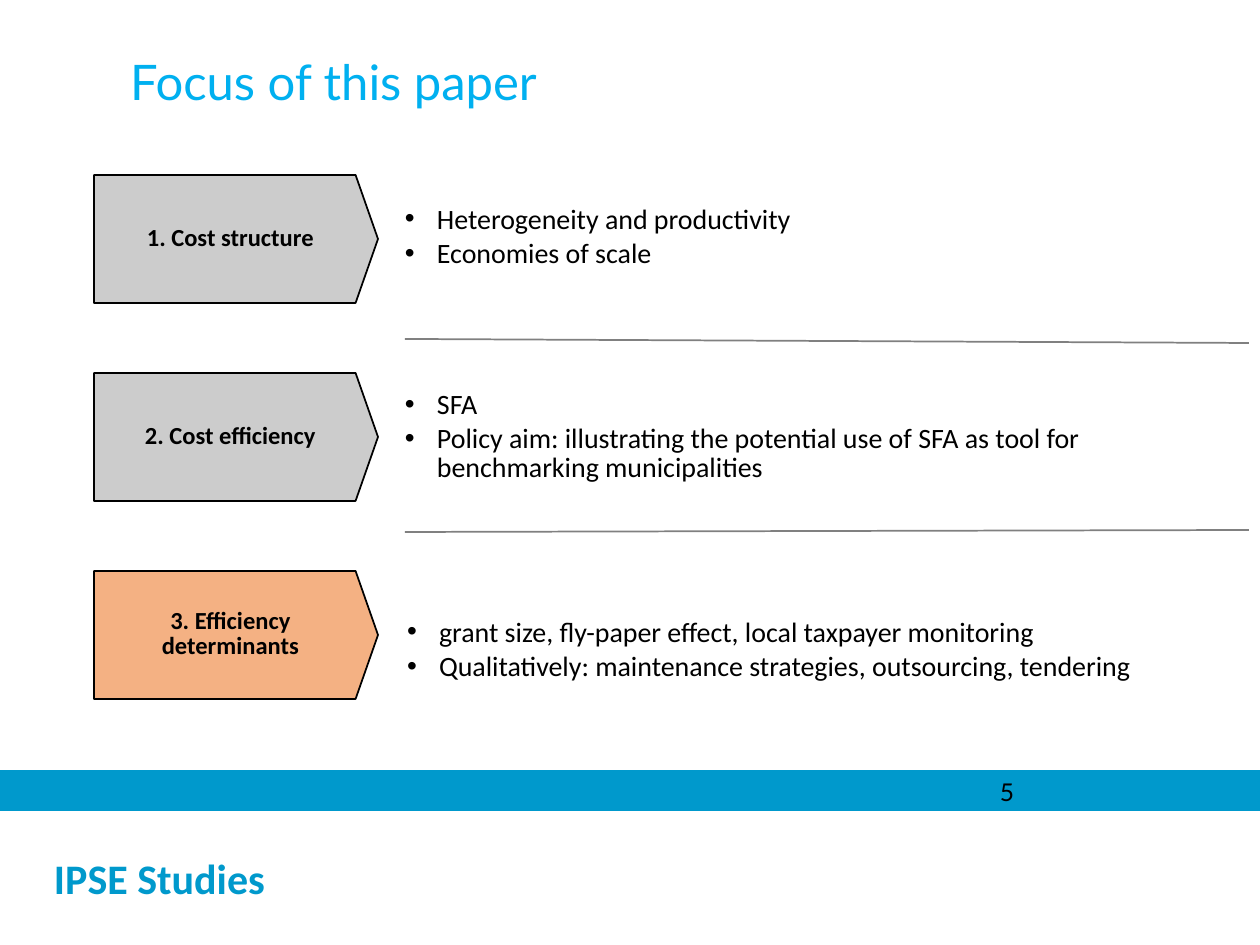
import dataclasses

import lxml.etree
import pptx
import pptx.dml.color
import pptx.enum.shapes
import pptx.enum.text
import pptx.oxml.ns
import pptx.util

EMU_PER_PX = 914400 / 126
COMPARISON_LAYOUT = 4
ALIGN = pptx.enum.text.PP_ALIGN
ANCHOR = pptx.enum.text.MSO_ANCHOR
SHAPE = pptx.enum.shapes.MSO_SHAPE


@dataclasses.dataclass(frozen=True)
class Theme:
    body_font: str = "Calibri"
    title_font: str = "Lato"
    black: str = "000000"
    white: str = "FFFFFF"
    title: str = "00B0F0"
    brand: str = "0099CC"
    step: str = "CCCCCC"
    active_step: str = "F4B183"
    divider: str = "808080"
    title_size: int = 28
    footer_size: int = 24
    list_size: int = 16
    label_size: int = 14
    tight: float = 0.85


THEME = Theme()

# label, fill, list box (left, top, width, height), list items
STEPS = [
    ("1. Cost structure", THEME.step, (405, 206, 855, 64),
     ["Heterogeneity and productivity", "Economies of scale"]),
    ("2. Cost efficiency", THEME.step, (405, 391, 800, 93),
     ["SFA", "Policy aim: illustrating the potential use of SFA as tool for "
             "benchmarking municipalities"]),
    ("3. Efficiency determinants", THEME.active_step, (407, 619, 800, 64),
     ["grant size, fly-paper effect, local taxpayer monitoring",
      "Qualitatively: maintenance strategies, outsourcing, tendering"]),
]
STEP_TOP, STEP_PITCH = 175, 198
DIVIDERS = [(339, 343), (532, 530)]


def px(length):
    return pptx.util.Emu(round(length * EMU_PER_PX))


def rgb(value):
    return pptx.dml.color.RGBColor.from_string(value)


def place(shape, left, top, width, height):
    shape.left, shape.top = px(left), px(top)
    shape.width, shape.height = px(width), px(height)


def set_frame(frame, anchor, margins):
    """Wrap the text, fix the box size and set left, top, right, bottom margins."""
    frame.word_wrap = True
    frame.auto_size = pptx.enum.text.MSO_AUTO_SIZE.NONE
    frame.vertical_anchor = anchor
    (frame.margin_left, frame.margin_top,
     frame.margin_right, frame.margin_bottom) = map(px, margins)


def style(paragraph, size, color, font=THEME.body_font, bold=False,
          align=ALIGN.LEFT, spacing=1.0):
    paragraph.alignment = align
    paragraph.line_spacing = spacing
    paragraph.font.name = font
    paragraph.font.size = pptx.util.Pt(size)
    paragraph.font.bold = bold
    paragraph.font.color.rgb = rgb(color)


def add_bullet(paragraph, indent):
    properties = paragraph._p.get_or_add_pPr()
    properties.set("marL", str(px(indent)))
    properties.set("indent", str(-px(indent)))
    for tag, name, value in (("a:buFont", "typeface", "Arial"),
                             ("a:buChar", "char", "•")):
        element = lxml.etree.SubElement(properties, pptx.oxml.ns.qn(tag))
        element.set(name, value)


def add_block(slide, kind, box, fill, line=None, weight=1):
    shape = slide.shapes.add_shape(kind, *map(px, box))
    shape.shadow.inherit = False
    shape.fill.solid()
    shape.fill.fore_color.rgb = rgb(fill)
    if line:
        shape.line.color.rgb = rgb(line)
        shape.line.width = pptx.util.Pt(weight)
    else:
        shape.line.fill.background()
    return shape


def add_footer(slide):
    footer = add_block(slide, SHAPE.RECTANGLE, (0, 811, 1260, 134), THEME.white)
    set_frame(footer.text_frame, ANCHOR.MIDDLE, (54, 6, 13, 6))
    footer.text_frame.text = "IPSE Studies"
    style(footer.text_frame.paragraphs[0], THEME.footer_size, THEME.brand, bold=True)

    add_block(slide, SHAPE.RECTANGLE, (0, 771, 1260, 39),
              THEME.brand, THEME.brand, 0.75)
    number = slide.shapes.add_textbox(*map(px, (987, 771, 262, 32)))
    set_frame(number.text_frame, ANCHOR.TOP, (13, 6, 13, 6))
    number.text_frame.text = "5"
    style(number.text_frame.paragraphs[0], THEME.label_size, THEME.black,
          THEME.title_font)


def add_step(slide, top, label, fill):
    arrow = add_block(slide, SHAPE.PENTAGON, (94, top, 284, 128), fill, THEME.black)
    arrow.adjustments[0] = 0.175
    set_frame(arrow.text_frame, ANCHOR.MIDDLE, (13, 13, 13, 13))
    arrow.text_frame.text = label
    style(arrow.text_frame.paragraphs[0], THEME.label_size, THEME.black,
          bold=True, align=ALIGN.CENTER, spacing=THEME.tight)


def fill_title(title, text):
    place(title, 54, 45, 1110, 72)
    set_frame(title.text_frame, ANCHOR.TOP, (76, 6, 13, 6))
    title.text_frame.text = text
    style(title.text_frame.paragraphs[0], THEME.title_size, THEME.title,
          THEME.title_font)


def fill_list(body, box, items):
    place(body, *box)
    set_frame(body.text_frame, ANCHOR.MIDDLE, (0, 0, 0, 0))
    body.text_frame.text = "\n".join(items)
    for index, paragraph in enumerate(body.text_frame.paragraphs):
        add_bullet(paragraph, 32)
        paragraph.space_before = pptx.util.Pt(3.2 if index else 0)
        style(paragraph, THEME.list_size, THEME.black, spacing=THEME.tight)


def add_divider(slide, start_y, end_y):
    line = slide.shapes.add_connector(
        pptx.enum.shapes.MSO_CONNECTOR.STRAIGHT,
        px(405), px(start_y), px(1249), px(end_y))
    line.line.color.rgb = rgb(THEME.divider)
    line.line.width = pptx.util.Pt(1)
    lxml.etree.SubElement(line._element.spPr, pptx.oxml.ns.qn("a:effectLst"))


def main():
    presentation = pptx.Presentation()
    presentation.slide_width, presentation.slide_height = px(1260), px(945)
    slide = presentation.slides.add_slide(
        presentation.slide_layouts[COMPARISON_LAYOUT])
    title, *bodies = slide.placeholders

    add_footer(slide)
    fill_title(title, "Focus of this paper")
    for index, (label, fill, box, items) in enumerate(STEPS):
        add_step(slide, STEP_TOP + index * STEP_PITCH, label, fill)
        fill_list(bodies[index], box, items)
    for unused in bodies[len(STEPS):]:
        unused._element.getparent().remove(unused._element)
    for start_y, end_y in DIVIDERS:
        add_divider(slide, start_y, end_y)
    presentation.save("out.pptx")


if __name__ == "__main__":
    main()
